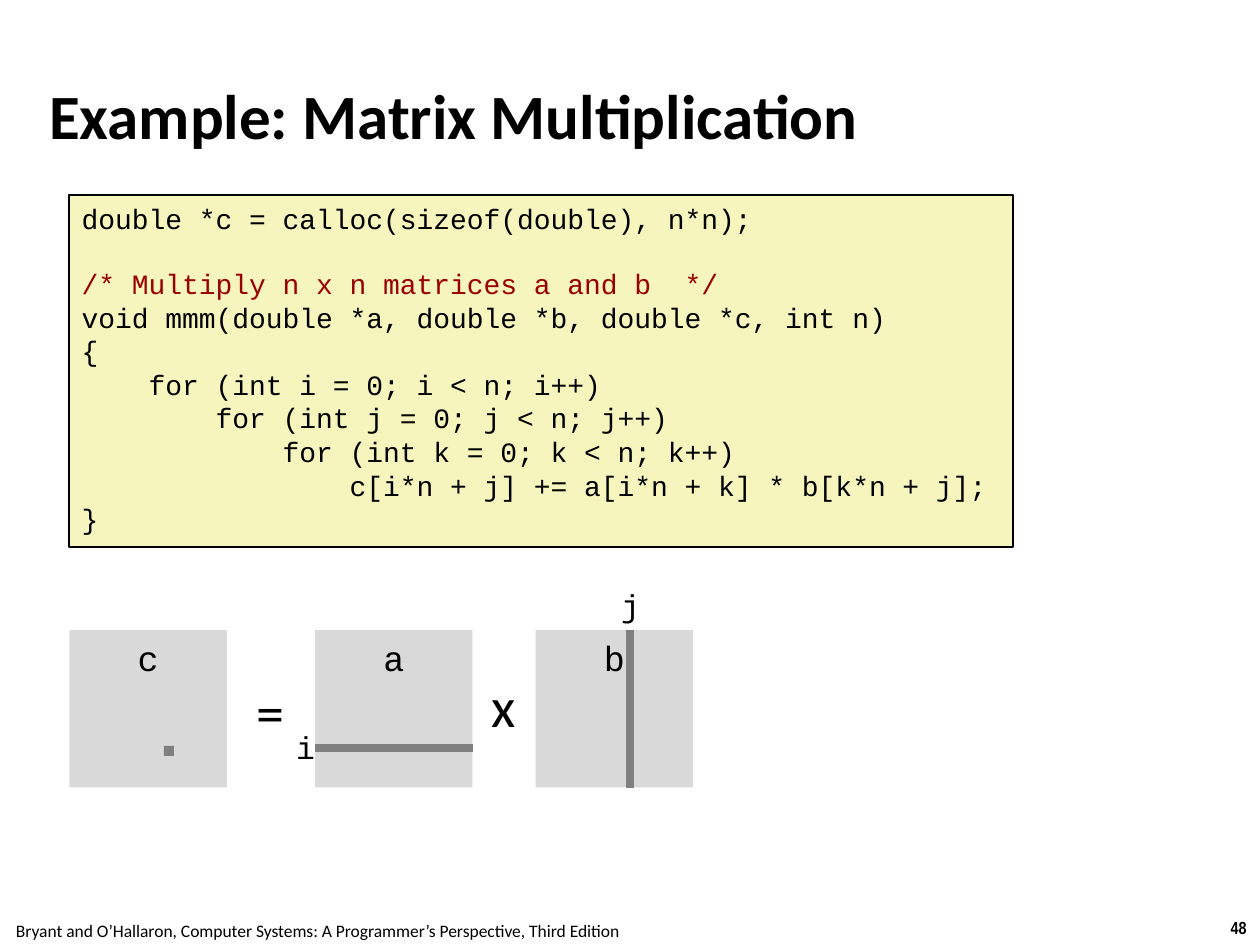
import pptx
import pptx.util
import pptx.dml.color
import pptx.enum.shapes
import pptx.enum.text
import lxml.etree

PX = 9144
BLACK = "000000"
GREY = "808080"
CODE_FONT = "Courier New"
ALIGN = pptx.enum.text.PP_ALIGN
ANCHOR = pptx.enum.text.MSO_ANCHOR
RECTANGLE = pptx.enum.shapes.MSO_SHAPE.RECTANGLE
STRAIGHT = pptx.enum.shapes.MSO_CONNECTOR.STRAIGHT


def color(value):
    return pptx.dml.color.RGBColor.from_string(value)


def write(paragraph, text, font, size, ink=BLACK, bold=False, align=ALIGN.CENTER):
    paragraph.alignment = align
    run = paragraph.add_run()
    run.text = text
    run.font.name = font
    run.font.size = pptx.util.Pt(size)
    run.font.bold = bold
    run.font.color.rgb = color(ink)


presentation = pptx.Presentation()
presentation.slide_width = 1000 * PX
presentation.slide_height = 750 * PX
slide = presentation.slides.add_slide(presentation.slide_layouts[5])
shapes = slide.shapes

title = shapes.title
title.left, title.top, title.width, title.height = 35 * PX, 49 * PX, 830 * PX, 83 * PX
frame = title.text_frame
frame.margin_left = frame.margin_right = frame.margin_top = frame.margin_bottom = 4 * PX
frame.vertical_anchor = ANCHOR.MIDDLE
write(frame.paragraphs[0], "Example: Matrix Multiplication", "Calibri", 36, bold=True, align=ALIGN.LEFT)

rectangles = {}
for name, left, top, width, height, fill in [
    ("c", 55, 500, 125, 125, "D9D9D9"),
    ("a", 250, 500, 125, 125, "D9D9D9"),
    ("b", 425, 500, 125, 125, "D9D9D9"),
    ("element", 130, 592, 8, 8, GREY),
    ("code", 55, 155, 749, 279, "F6F5BD"),
]:
    shape = shapes.add_shape(RECTANGLE, left * PX, top * PX, width * PX, height * PX)
    shape.shadow.inherit = False
    shape.fill.solid()
    shape.fill.fore_color.rgb = color(fill)
    shape.line.fill.background()
    shape.text_frame.vertical_anchor = ANCHOR.TOP
    rectangles[name] = shape

for matrix in "cab":
    write(rectangles[matrix].text_frame.paragraphs[0], matrix, CODE_FONT, 20)

code = rectangles["code"]
code.line.color.rgb = color(BLACK)
code.line.width = pptx.util.Pt(1)
code.text_frame.word_wrap = False
code_lines = [
    "double *c = calloc(sizeof(double), n*n);",
    "/* Multiply n x n matrices a and b  */",
    "void mmm(double *a, double *b, double *c, int n)",
    "{",
    "    for (int i = 0; i < n; i++)",
    "        for (int j = 0; j < n; j++)",
    "            for (int k = 0; k < n; k++)",
    "                c[i*n + j] += a[i*n + k] * b[k*n + j];",
    "}",
]
for index, line in enumerate(code_lines):
    paragraph = code.text_frame.add_paragraph() if index else code.text_frame.paragraphs[0]
    is_comment = line.startswith("/*")
    if is_comment:
        paragraph.space_before = pptx.util.Pt(18)
    write(paragraph, line, CODE_FONT, 16, "990000" if is_comment else BLACK, align=ALIGN.LEFT)

for start_x, start_y, end_x, end_y in [(250, 594, 375, 594), (500, 500, 500, 625)]:
    connector = shapes.add_connector(STRAIGHT, start_x * PX, start_y * PX, end_x * PX, end_y * PX)
    connector.line.color.rgb = color(GREY)
    connector.line.width = pptx.util.Pt(4.5)
    properties = connector.element.spPr
    lxml.etree.SubElement(properties, pptx.oxml.ns.qn("a:effectLst"))

for text, left, top, width, height, font, size, bold in [
    ("i", 225, 573, 35, 40, CODE_FONT, 18, False),
    ("j", 483, 460, 35, 40, CODE_FONT, 18, False),
    ("x", 379, 528, 41, 64, "Calibri", 32, False),
    ("=", 193, 533, 43, 64, "Calibri", 32, False),
    ("48", 966, 723, 34, 27, "Arial Narrow", 10, True),
    ("Bryant and O’Hallaron, Computer Systems: A Programmer’s Perspective, Third Edition",
     -2, 725, 508, 27, "Calibri", 10, False),
]:
    label = shapes.add_textbox(left * PX, top * PX, width * PX, height * PX)
    label.text_frame.word_wrap = False
    write(label.text_frame.paragraphs[0], text, font, size, bold=bold)

presentation.save("out.pptx")
